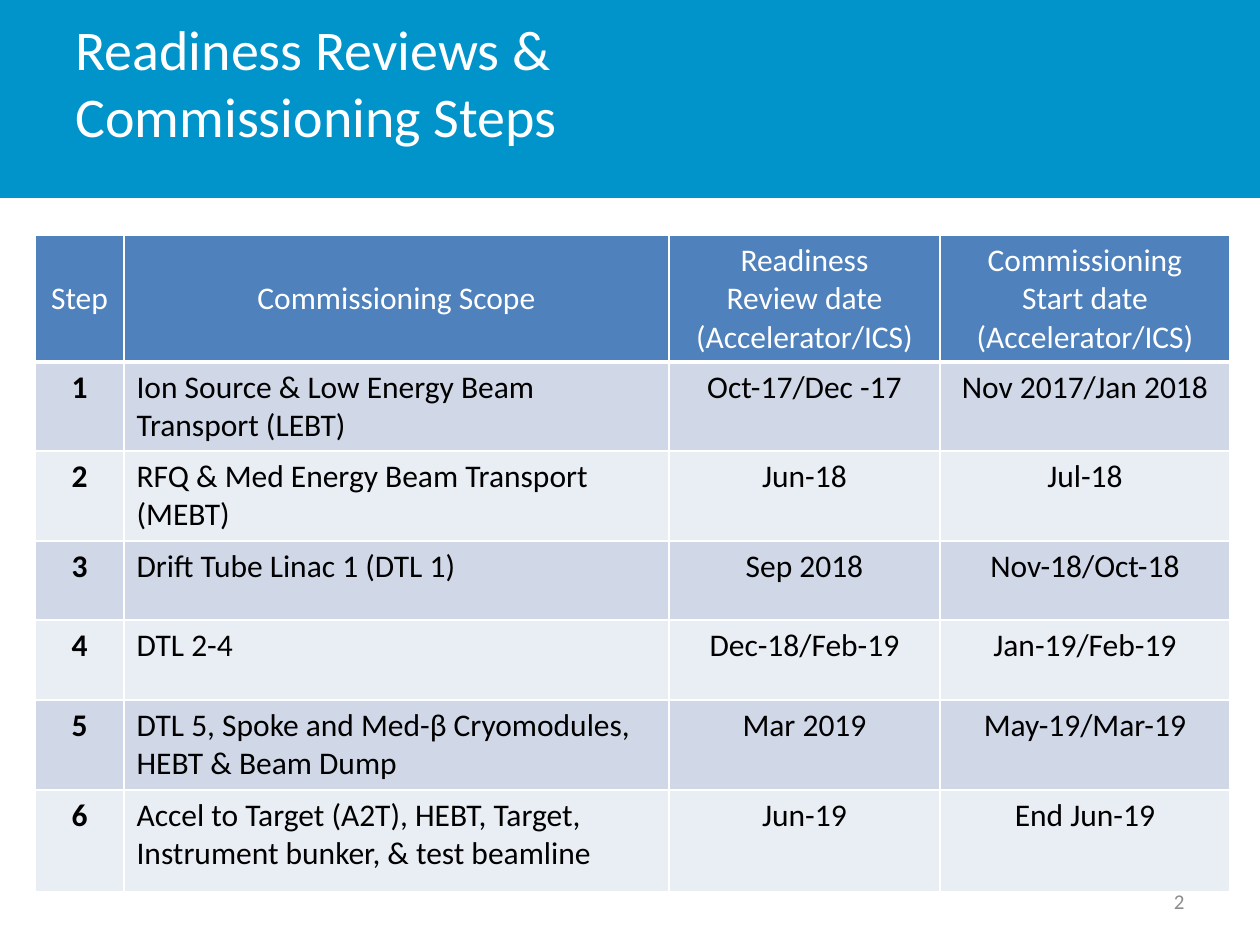
from lxml import etree
from pptx import Presentation, util as u
from pptx.dml.color import RGBColor
from pptx.enum import shapes, text
from pptx.oxml.ns import qn

PX_PER_INCH = 126
WHITE, BLACK, GREY = "FFFFFF", "000000", "8C8C8C"
BANNER_BLUE, HEADER_BLUE = "0094CA", "4F81BD"
BANDS = ("D0D8E8", "E9EDF4")
LEFT, CENTER, RIGHT = text.PP_ALIGN.LEFT, text.PP_ALIGN.CENTER, text.PP_ALIGN.RIGHT
TOP, MIDDLE = text.MSO_ANCHOR.TOP, text.MSO_ANCHOR.MIDDLE

COLUMN_WIDTHS = (89, 545, 271, 290)
ROW_HEIGHTS = (127, 89, 90, 79, 80, 90, 102)
HEADINGS = (
    "Step",
    "Commissioning Scope",
    "Readiness\nReview date\n(Accelerator/ICS)",
    "Commissioning\nStart date\n(Accelerator/ICS)",
)
STEPS = (
    ("Ion Source & Low Energy Beam Transport (LEBT)", "Oct-17/Dec -17", "Nov 2017/Jan 2018"),
    ("RFQ & Med Energy Beam Transport (MEBT)", "Jun-18", "Jul-18"),
    ("Drift Tube Linac 1 (DTL 1)", "Sep 2018", "Nov-18/Oct-18"),
    ("DTL 2-4", "Dec-18/Feb-19", "Jan-19/Feb-19"),
    ("DTL 5, Spoke and Med-β Cryomodules, HEBT & Beam Dump", "Mar 2019", "May-19/Mar-19"),
    ("Accel to Target (A2T), HEBT, Target, Instrument bunker, & test beamline",
     "Jun-19", "End Jun-19"),
)


def px(length):
    return u.Emu(round(length * u.Inches(1) / PX_PER_INCH))


def color(value):
    return RGBColor.from_string(value)


class Page:
    font_name = "Calibri"

    def __init__(self, deck):
        self.slide = deck.slides.add_slide(deck.slide_layouts[6])

    def set_text(self, frame, words, size, ink, align=LEFT, bold=False):
        frame.text = words
        for paragraph in frame.paragraphs:
            paragraph.alignment = align
            font = paragraph.font
            font.name, font.size, font.bold = self.font_name, u.Pt(size), bold
            font.color.rgb = color(ink)

    def rectangle(self, left, top, width, height, fill):
        shape = self.slide.shapes.add_shape(
            shapes.MSO_SHAPE.RECTANGLE, px(left), px(top), px(width), px(height))
        shape.shadow.inherit = False
        shape.fill.solid()
        shape.fill.fore_color.rgb = color(fill)
        shape.line.fill.background()

    def label(self, left, top, width, height, words, size, ink, align=LEFT, anchor=TOP):
        box = self.slide.shapes.add_textbox(px(left), px(top), px(width), px(height))
        frame = box.text_frame
        frame.word_wrap = True
        frame.vertical_anchor = anchor
        self.set_text(frame, words, size, ink, align)

    def table(self, left, top, widths, heights):
        frame = self.slide.shapes.add_table(
            len(heights), len(widths), px(left), px(top), px(sum(widths)), px(sum(heights)))
        table = frame.table
        for column, width in zip(table.columns, widths):
            column.width = px(width)
        for row, height in zip(table.rows, heights):
            row.height = px(height)
        return table

    def cell(self, cell, words, fill, ink, align=CENTER, anchor=TOP, bold=False, bottom=1):
        self.set_text(cell.text_frame, words, 18, ink, align, bold)
        cell.vertical_anchor = anchor
        self.borders(cell, bottom)
        cell.fill.solid()
        cell.fill.fore_color.rgb = color(fill)

    def borders(self, cell, bottom):
        """Draw white borders, with the bottom one given in points."""
        properties = cell._tc.get_or_add_tcPr()
        for side, width in (("lnL", 1), ("lnR", 1), ("lnT", 1), ("lnB", bottom)):
            line = etree.SubElement(properties, qn(f"a:{side}"), w=str(u.Pt(width)))
            fill = etree.SubElement(line, qn("a:solidFill"))
            etree.SubElement(fill, qn("a:srgbClr"), val=WHITE)


def main():
    deck = Presentation()
    deck.slide_width, deck.slide_height = px(1260), px(945)
    page = Page(deck)

    page.rectangle(0, 0, 1260, 198, BANNER_BLUE)
    page.label(63, 8, 984, 157, "Readiness Reviews &\nCommissioning Steps", 32, WHITE)
    page.label(903, 876, 294, 50, "2", 12, GREY, RIGHT, MIDDLE)

    table = page.table(35, 235, COLUMN_WIDTHS, ROW_HEIGHTS)
    for column, heading in enumerate(HEADINGS):
        page.cell(table.cell(0, column), heading, HEADER_BLUE, WHITE, anchor=MIDDLE, bottom=3)
    for number, step in enumerate(STEPS, start=1):
        for column, words in enumerate((str(number), *step)):
            page.cell(table.cell(number, column), words, BANDS[(number - 1) % 2], BLACK,
                      align=LEFT if column == 1 else CENTER, bold=column == 0)

    deck.save("out.pptx")


if __name__ == "__main__":
    main()
